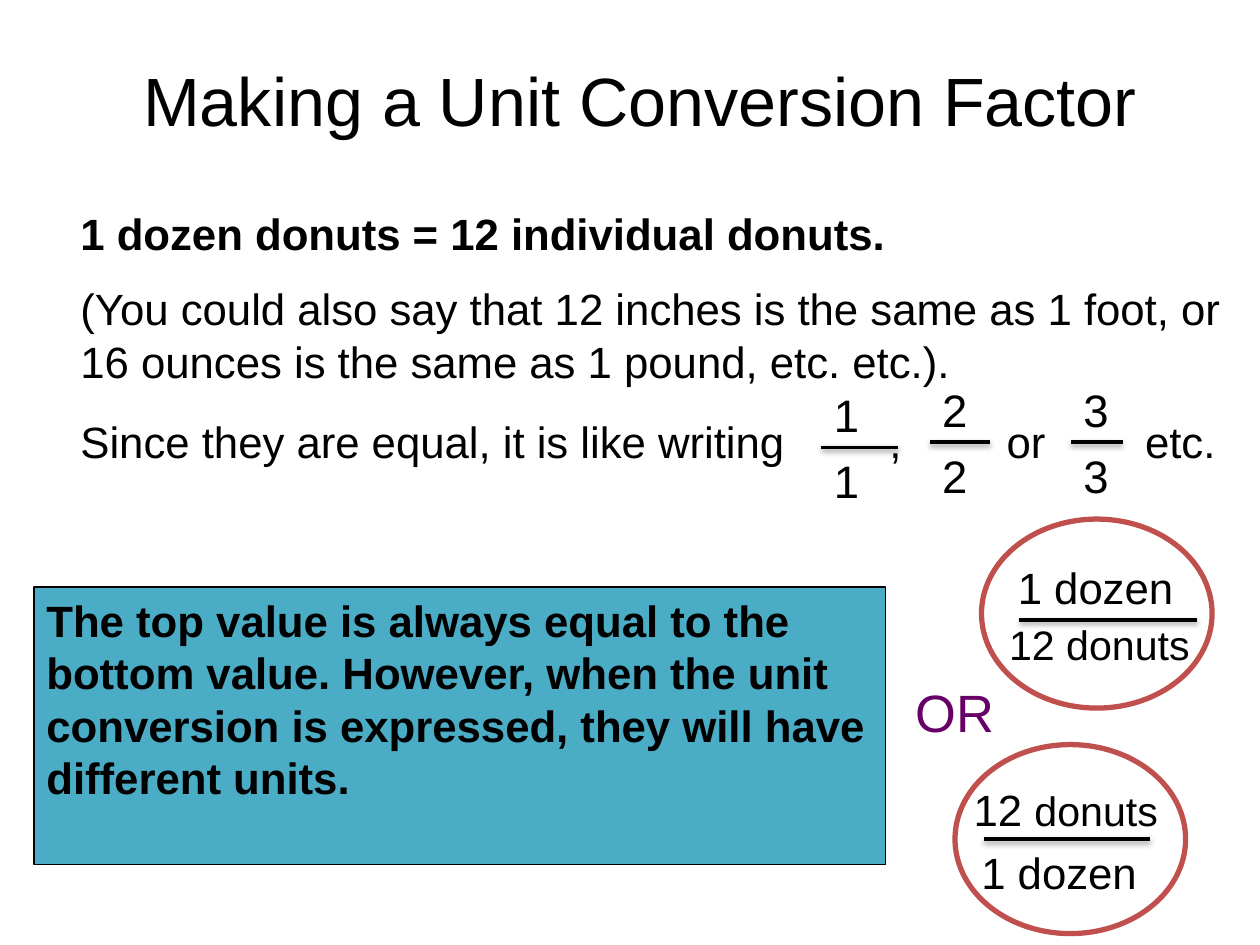
from lxml import etree
from pptx import Presentation
from pptx.dml.color import RGBColor
from pptx.enum.shapes import MSO_CONNECTOR, MSO_SHAPE
from pptx.enum.text import MSO_ANCHOR, PP_ALIGN
from pptx.oxml.ns import qn
from pptx.util import Emu, Pt

PX = 9144
PT = 12700
STRAIGHT = MSO_CONNECTOR.STRAIGHT
RECTANGLE, OVAL = MSO_SHAPE.RECTANGLE, MSO_SHAPE.OVAL
TOP = MSO_ANCHOR.TOP
LEFT, CENTER = PP_ALIGN.LEFT, PP_ALIGN.CENTER
FONT = "Arial"
BLACK, TEAL, RED, PURPLE = "000000", "4BACC6", "C0504D", "660066"
LINE_FACTOR = 1.2


def px(*values):
    return [Emu(value * PX) for value in values]


def paint(color_owner, color):
    color_owner.solid()
    color_owner.fore_color.rgb = RGBColor.from_string(color)


def write(paragraph, text, size=25, bold=False, color=BLACK, align=LEFT, before=0, spacing=1):
    paragraph.alignment = align
    paragraph.space_before = Pt(before)
    paragraph.line_spacing = Pt(round(size * LINE_FACTOR * spacing, 1))
    run = paragraph.add_run()
    run.text = text
    run.font.name = FONT
    run.font.size = Pt(size)
    run.font.bold = bold
    paint(run.font.fill, color)
    return paragraph


def add_frame(shapes, box, wrap=True):
    frame = shapes.add_textbox(*px(*box)).text_frame
    frame.word_wrap = wrap
    return frame


def add_outlined(shapes, kind, box, line, width, fill=None):
    shape = shapes.add_shape(kind, *px(*box))
    shape.shadow.inherit = False
    if fill:
        paint(shape.fill, fill)
    else:
        shape.fill.background()
    paint(shape.line.fill, line)
    shape.line.width = Pt(width)
    return shape


def add_bar(shapes, left, right, y):
    bar = shapes.add_connector(STRAIGHT, *px(left, y, right, y))
    paint(bar.line.fill, BLACK)
    bar.line.width = Pt(2)
    effects = etree.SubElement(bar._element.spPr, qn("a:effectLst"))
    shadow = etree.SubElement(effects, qn("a:outerShdw"), blurRad=str(int(3.1 * PT)),
                              dist=str(int(1.6 * PT)), dir="5400000", rotWithShape="0")
    color = etree.SubElement(shadow, qn("a:srgbClr"), val=BLACK)
    etree.SubElement(color, qn("a:alpha"), val="38000")


def add_tabs(paragraph, positions):
    tabs = etree.SubElement(paragraph._p.get_or_add_pPr(), qn("a:tabLst"))
    for position in positions:
        etree.SubElement(tabs, qn("a:tab"), pos=str(position * PX), algn="l")


def add_title(slide, box):
    frame = add_frame(slide.shapes, box)
    write(frame.paragraphs[0], "Making a Unit Conversion Factor", size=39, align=CENTER)


def add_body(slide, box):
    frame = add_frame(slide.shapes, box)
    write(frame.paragraphs[0], "1 dozen donuts = 12 individual donuts.", bold=True)
    write(frame.add_paragraph(), "(You could also say that 12 inches is the same as 1 foot, "
          "or 16 ounces is the same as 1 pound, etc. etc.).", before=13)
    equality = write(frame.add_paragraph(),
                     "Since they are equal, it is like writing\t,\tor\tetc.", before=16)
    add_tabs(equality, (642, 735, 845))


def add_number_fraction(slide, box, number, bar_length):
    left, top, width, height = box
    shapes = slide.shapes.add_group_shape().shapes
    frame = add_frame(shapes, box)
    for paragraph in (frame.paragraphs[0], frame.add_paragraph()):
        write(paragraph, number, size=26, spacing=1.2)
    add_bar(shapes, left, left + bar_length, top + 61)


def add_unit_fraction(slide, box, numerator, denominator, bar):
    left, top, width, height = box
    shapes = slide.shapes.add_group_shape().shapes
    add_outlined(shapes, OVAL, box, RED, 3)
    for (x, y, text_width), runs in (numerator, denominator):
        frame = add_frame(shapes, (left + x, top + y, text_width, 44), wrap=False)
        for text, size in runs:
            write(frame.paragraphs[0], text, size=size)
    start, end, y = bar
    add_bar(shapes, left + start, left + end, top + y)


def add_callout(slide, box):
    shape = add_outlined(slide.shapes, RECTANGLE, box, BLACK, 0.75, TEAL)
    frame = shape.text_frame
    frame.word_wrap = True
    frame.vertical_anchor = TOP
    write(frame.paragraphs[0], "The top value is always equal to the bottom value. However, when "
          "the unit conversion is expressed, they will have different units.", bold=True)


def add_alternative(slide, box):
    write(add_frame(slide.shapes, box).paragraphs[0], "OR", size=30, color=PURPLE)


def main():
    presentation = Presentation()
    presentation.slide_width, presentation.slide_height = px(1000, 750)
    slide = presentation.slides.add_slide(presentation.slide_layouts[6])
    add_body(slide, (54, 159, 946, 305))
    add_number_fraction(slide, (652, 294, 108, 114), "1", 61)
    add_number_fraction(slide, (738, 290, 87, 114), "2", 48)
    add_number_fraction(slide, (850, 290, 73, 114), "3", 41)
    add_title(slide, (93, 41, 830, 76))
    add_callout(slide, (27, 466, 676, 220))
    dozen = [("1 dozen", 25)]
    add_unit_fraction(slide, (779, 412, 183, 150), ((19, 28, 144), dozen),
                      ((12, 75, 175), [("12 donuts", 23.5)]), (30, 171, 80))
    add_unit_fraction(slide, (758, 591, 183, 150),
                      ((5, 28, 174), [("12 ", 25), ("donuts", 23.5)]),
                      ((11, 75, 145), dozen), (23, 155, 75))
    add_alternative(slide, (717, 535, 85, 61))
    presentation.save("out.pptx")


if __name__ == "__main__":
    main()
